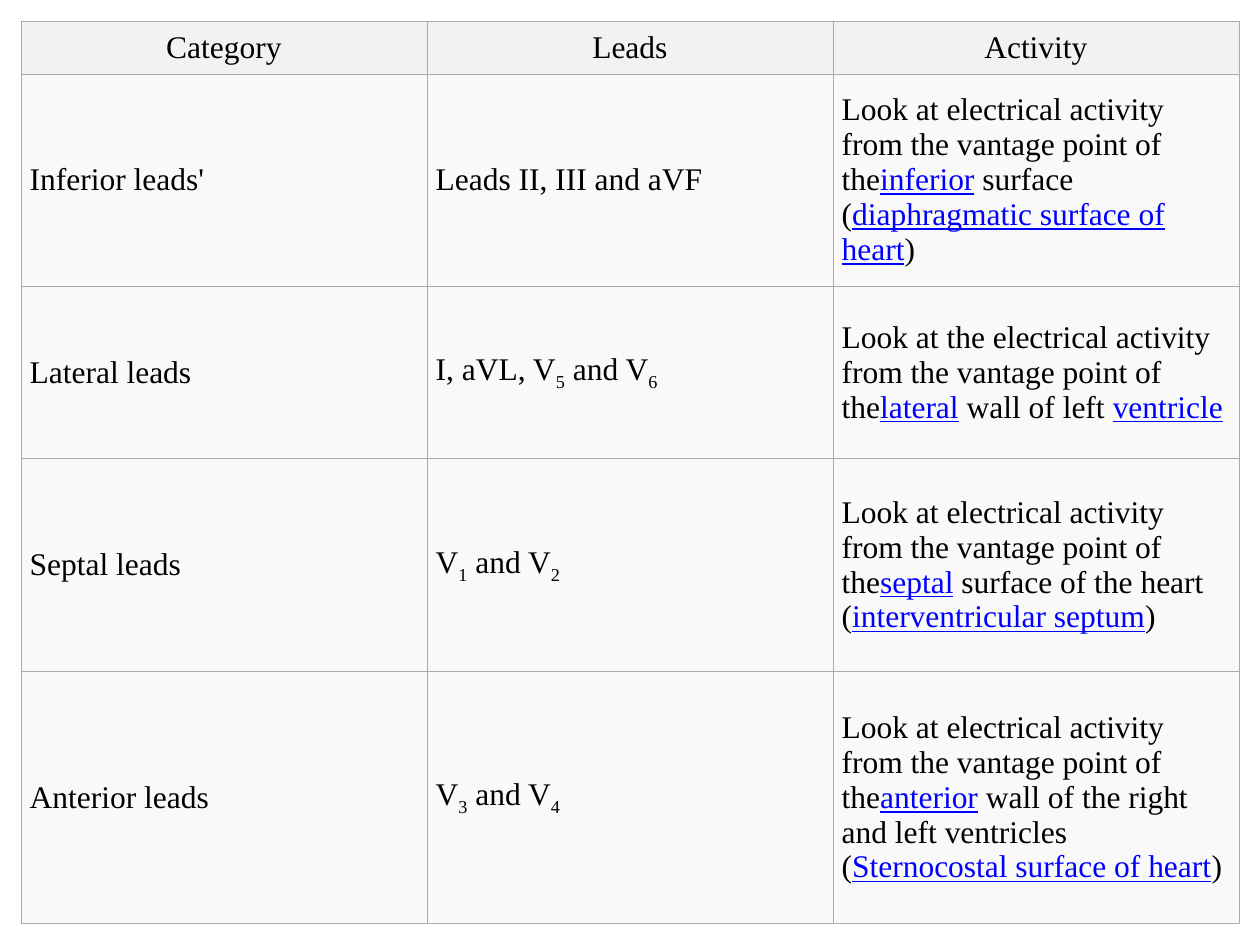
from pptx import Presentation
from pptx.dml.color import RGBColor
from pptx.enum.text import MSO_ANCHOR as Anchor, PP_ALIGN as Align
from pptx.oxml.xmlchemy import OxmlElement as Element
from pptx.util import Pt

COLORS = {
    "text": "000000",
    "link": "0000FF",
    "header": "F2F2F2",
    "body": "F9F9F9",
    "border": "AAAAAA",
}
HEADERS = ["Category", "Leads", "Activity"]
# Spans alternate between plain and marked text, beginning with plain.
LEAD_GROUPS = [
    [["Inferior leads'"],
     ["Leads II, III and aVF"],
     ["Look at electrical activity from the vantage point of the", "inferior",
      " surface (", "diaphragmatic surface of heart", ")"]],
    [["Lateral leads"],
     ["I, aVL, V", "5", " and V", "6"],
     ["Look at the electrical activity from the vantage point of the", "lateral",
      " wall of left ", "ventricle"]],
    [["Septal leads"],
     ["V", "1", " and V", "2"],
     ["Look at electrical activity from the vantage point of the", "septal",
      " surface of the heart (", "interventricular septum", ")"]],
    [["Anterior leads"],
     ["V", "3", " and V", "4"],
     ["Look at electrical activity from the vantage point of the", "anterior",
      " wall of the right and left ventricles (", "Sternocostal surface of heart", ")"]],
]
COLUMN_MARKS = [None, "subscript", "link"]
ROW_HEIGHTS = [30.25, 121.25, 98.75, 121.25, 144.5]
COLUMN_WIDTH = 232
MARGIN = 12


class SlideBuilder:
    """Holds the style and the current slide."""

    font_name = "Times New Roman"
    font_size = 18
    border_width = 0.5

    def __init__(self, page):
        self.page = page

    def color(self, name):
        return RGBColor.from_string(COLORS[name])

    def table(self, left, top, column_widths, row_heights):
        frame = self.page.shapes.add_table(
            len(row_heights), len(column_widths), Pt(left), Pt(top),
            Pt(sum(column_widths)), Pt(sum(row_heights)))
        table = frame.table
        table.horz_banding = False
        for column, width in zip(table.columns, column_widths):
            column.width = Pt(width)
        for row, height in zip(table.rows, row_heights):
            row.height = Pt(height)
        return table

    def cell(self, cell, spans, fill, mark=None, align=Align.LEFT):
        cell.margin_left = cell.margin_right = Pt(5)
        cell.margin_top = cell.margin_bottom = Pt(2.5)
        cell.vertical_anchor = Anchor.MIDDLE
        self.borders(cell)
        cell.fill.solid()
        cell.fill.fore_color.rgb = self.color(fill)
        para = cell.text_frame.paragraphs[0]
        para.alignment = align
        for index, text in enumerate(spans):
            self.span(para, text, mark if index % 2 else None)

    def span(self, para, text, mark):
        span = para.add_run()
        span.text = text
        span.font.name = self.font_name
        span.font.size = Pt(self.font_size)
        span.font.color.rgb = self.color("link" if mark == "link" else "text")
        if mark == "link":
            span.font.underline = True
        elif mark == "subscript":
            span.font._element.set("baseline", "-25000")

    def borders(self, cell):
        """Add the four border lines; call before filling the cell."""
        properties = cell._tc.get_or_add_tcPr()
        for side in ("lnL", "lnR", "lnT", "lnB"):
            line = Element(f"a:{side}")
            line.set("w", str(Pt(self.border_width)))
            fill = Element("a:solidFill")
            color = Element("a:srgbClr")
            color.set("val", COLORS["border"])
            fill.append(color)
            line.append(fill)
            properties.append(line)


def main():
    deck = Presentation()
    deck.slide_width, deck.slide_height = Pt(720), Pt(540)
    builder = SlideBuilder(deck.slides.add_slide(deck.slide_layouts[6]))

    table = builder.table(MARGIN, MARGIN, [COLUMN_WIDTH] * len(HEADERS), ROW_HEIGHTS)
    for column, header in enumerate(HEADERS):
        builder.cell(table.cell(0, column), [header], "header", align=Align.CENTER)
    for row, group in enumerate(LEAD_GROUPS, start=1):
        for column, (spans, mark) in enumerate(zip(group, COLUMN_MARKS)):
            builder.cell(table.cell(row, column), spans, "body", mark)

    deck.save("out.pptx")


if __name__ == "__main__":
    main()
